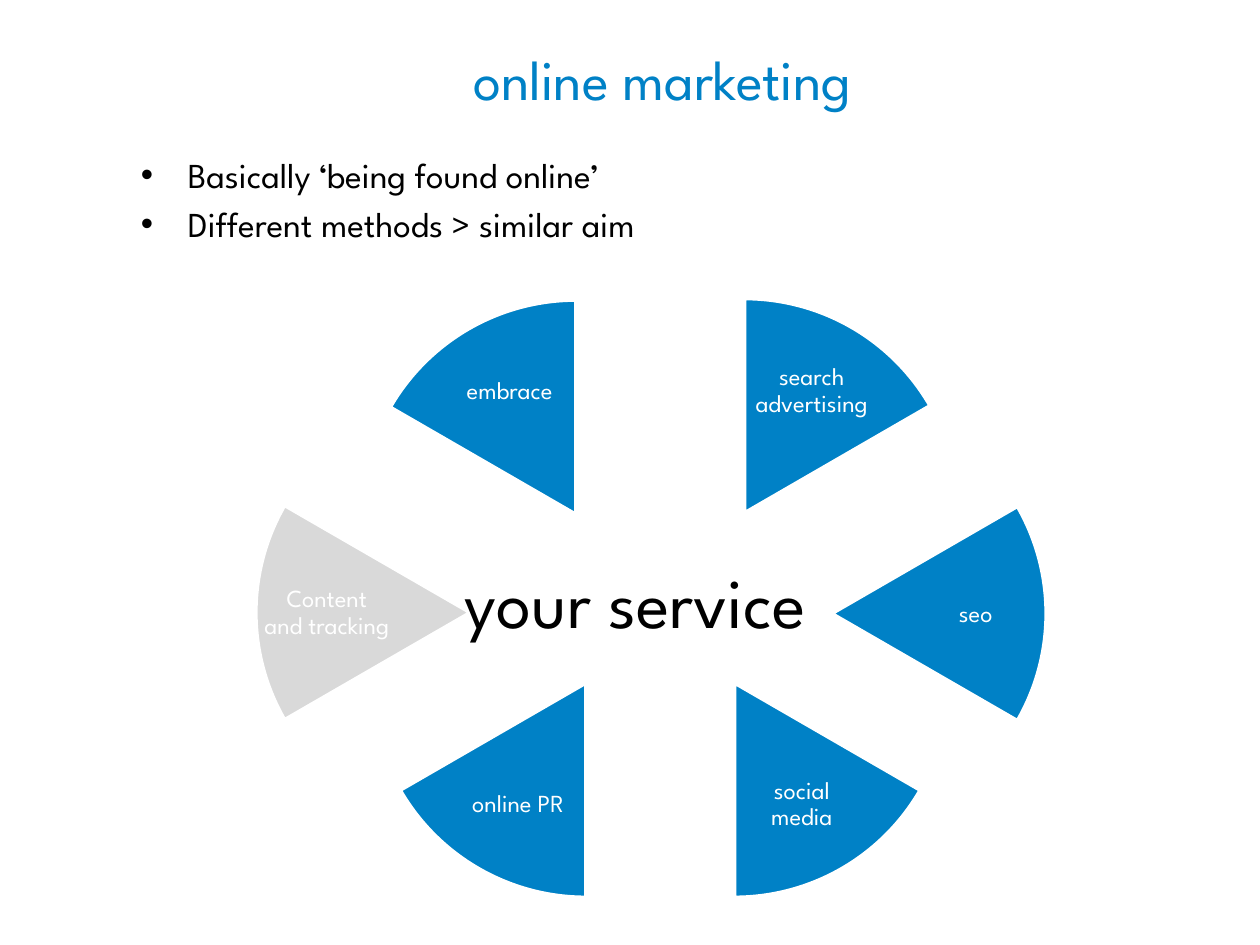
from lxml.etree import SubElement
from pptx import Presentation
from pptx.dml.color import RGBColor
from pptx.enum.shapes import MSO_SHAPE
from pptx.enum.text import MSO_ANCHOR, PP_ALIGN
from pptx.oxml.ns import qn
from pptx.util import Cm, Pt

BLUE = RGBColor(0x00, 0x81, 0xC6)
GREY = RGBColor(0xD9, 0xD9, 0xD9)
WHITE = RGBColor(0xFF, 0xFF, 0xFF)
BLACK = RGBColor(0x00, 0x00, 0x00)
FONT = "League Spartan"
SIZE = 8.64
STEP = 36

PARTS = [
    (["search advertising"], BLUE, (10.69, 6.02), (15.11, 6.96, 2.51, 1.85)),
    (["seo"], BLUE, (12.45, 8.05), (18.36, 11.51, 2.62, 1.75)),
    (["social media"], BLUE, (10.49, 9.45), (14.91, 15.29, 2.51, 1.85)),
    (["online PR"], BLUE, (7.49, 9.45), (9.19, 15.29, 2.51, 1.85)),
    (["Content", "and tracking"], GREY, (5.16, 8.03), (5.28, 11.48, 2.62, 1.75)),
    (["embrace"], BLUE, (7.29, 6.05), (9.02, 6.96, 2.51, 1.85)),
]
POINTS = ["Basically ‘being found online’", "Different methods > similar aim"]


def add_box(slide, place, anchor=MSO_ANCHOR.TOP, inset=None):
    box = slide.shapes.add_textbox(*map(Cm, place))
    frame = box.text_frame
    frame.word_wrap = True
    frame.vertical_anchor = anchor
    if inset is not None:
        frame.margin_left = frame.margin_right = Cm(inset)
        frame.margin_top = frame.margin_bottom = Cm(inset)
    return frame


def add_run(para, text, size, color):
    run = para.add_run()
    run.text = text
    run.font.name = FONT
    run.font.size = Pt(size)
    run.font.color.rgb = color


def add_title(slide, text):
    frame = add_box(slide, (2.59, 0.76, 21.54, 1.63), MSO_ANCHOR.MIDDLE)
    para = frame.paragraphs[0]
    para.alignment = PP_ALIGN.CENTER
    add_run(para, text, 32, BLUE)


def add_list(slide, items):
    frame = add_box(slide, (2.59, 2.97, 21.54, 14.05))
    for num, item in enumerate(items):
        para = frame.add_paragraph() if num else frame.paragraphs[0]
        props = para._p.get_or_add_pPr()
        props.set("marL", str(Cm(0.95)))
        props.set("indent", str(Cm(-0.95)))
        SubElement(props, qn("a:buFont"), typeface="Arial")
        SubElement(props, qn("a:buChar"), char="•")
        if num:
            para.space_before = Pt(4)
        add_run(para, item, 20, BLACK)


def add_slice(slide, spot, start, color):
    pie = slide.shapes.add_shape(
        MSO_SHAPE.PIE, *map(Cm, spot), Cm(SIZE), Cm(SIZE))
    pie.adjustments[0] = start
    pie.adjustments[1] = (start + STEP) % (6 * STEP)
    pie.shadow.inherit = False
    pie.fill.solid()
    pie.fill.fore_color.rgb = color
    pie.line.color.rgb = WHITE
    pie.line.width = Pt(2)


def add_label(slide, lines, place):
    frame = add_box(slide, place, MSO_ANCHOR.MIDDLE, 0.05)
    para = frame.paragraphs[0]
    para.alignment = PP_ALIGN.CENTER
    para.line_spacing = 0.9
    for num, line in enumerate(lines):
        if num:
            para.add_line_break()
        add_run(para, line, 14, WHITE)


def main():
    deck = Presentation()
    deck.slide_width, deck.slide_height = Cm(25.4), Cm(19.05)
    slide = deck.slides.add_slide(deck.slide_layouts[6])
    add_title(slide, "online marketing")
    add_list(slide, POINTS)
    for num, (lines, color, spot, place) in enumerate(PARTS):
        add_slice(slide, spot, (162 + num * STEP) % (6 * STEP), color)
        add_label(slide, lines, place)
    hub = add_box(slide, (9.12, 11.13, 9.4, 1.96))
    add_run(hub.paragraphs[0], "your service", 40, BLACK)
    deck.save("out.pptx")


if __name__ == "__main__":
    main()
